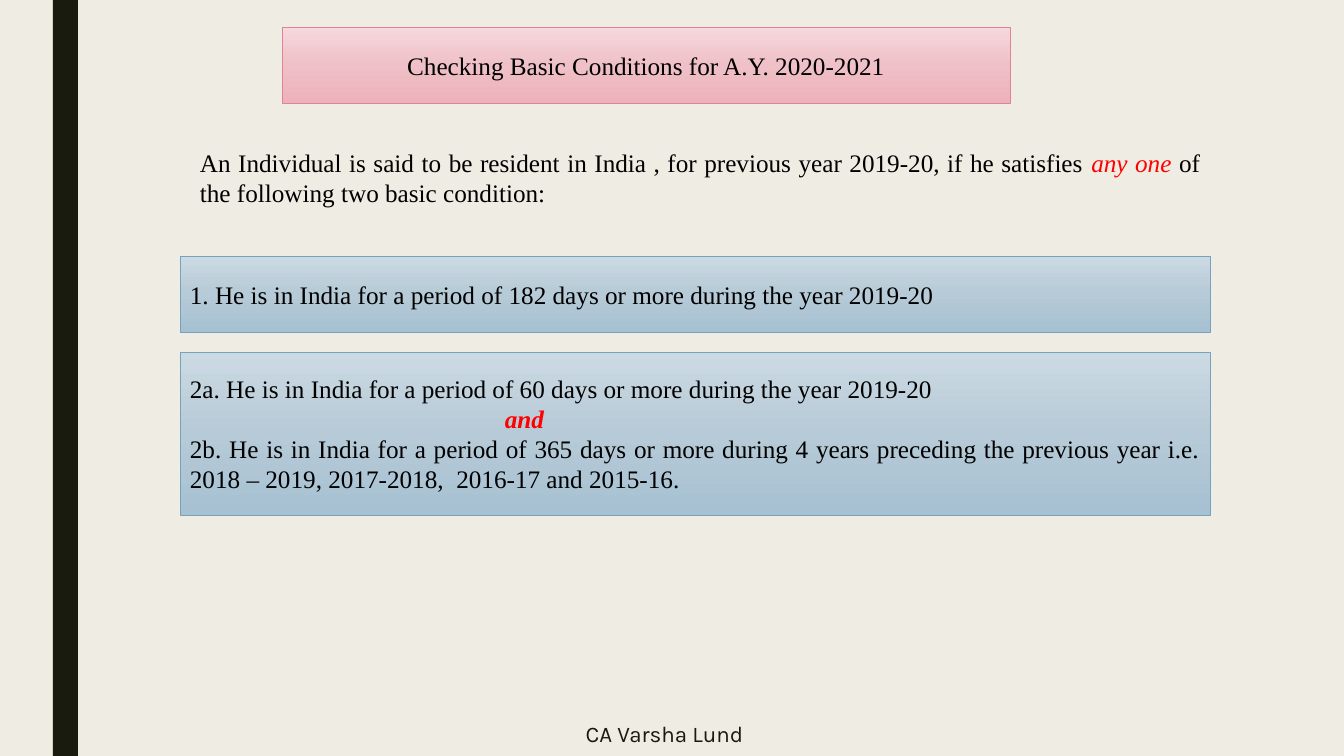
from copy import deepcopy

from pptx import Presentation, util as u
from pptx.dml.color import RGBColor
from pptx.enum import shapes, text
from pptx.oxml.ns import qn

SCALE = 12192000 / 1344  # EMU per px
INK, RED, DARK, PAPER = "000000", "FF0000", "191B0E", "EFEDE3"
PINK = ("F6D9DD", "EFC0C7", "EEB2BB"), "E28394"
BLUE = ("CCDAE3", "B6CAD7", "A7C1D2"), "77A2BB"
CENTER, JUSTIFY = text.PP_ALIGN.CENTER, text.PP_ALIGN.JUSTIFY
TOP, MIDDLE = text.MSO_ANCHOR.TOP, text.MSO_ANCHOR.MIDDLE


def px(length):
    return u.Emu(round(length * SCALE))


def rgb(color):
    return RGBColor.from_string(color)


class ConditionsSlide:
    font, size = "Times New Roman", 18

    def __init__(self, deck):
        self.slide = deck.slides.add_slide(deck.slide_layouts[5])
        self.slide.background.fill.solid()
        self.slide.background.fill.fore_color.rgb = rgb(PAPER)

    def rectangle(self, *box):
        shape = self.slide.shapes.add_shape(
            shapes.MSO_SHAPE.RECTANGLE, *map(px, box))
        shape.shadow.inherit = False
        return shape

    def bar(self, box, color):
        bar = self.rectangle(*box)
        bar.fill.solid()
        bar.fill.fore_color.rgb = rgb(color)
        bar.line.fill.background()

    def shade(self, shape, palette):
        """Fill from top to bottom through three colours, with a thin outline."""
        colors, outline = palette
        shape.fill.gradient()
        shape.fill.gradient_angle = 270
        stops = shape._element.spPr.find(".//" + qn("a:gsLst"))
        stops.insert(1, deepcopy(stops[0]))
        for stop, color, position in zip(
                shape.fill.gradient_stops, colors, (0, 0.5, 1)):
            stop.color.rgb = rgb(color)
            stop.position = position
        shape.line.color.rgb = rgb(outline)
        shape.line.width = u.Pt(0.5)

    def put_text(self, shape, paragraphs, align, anchor=MIDDLE, color=INK,
                 font=font, size=size):
        """Each paragraph is (indent, runs); a run is (words, style letters).

        Style letters: r red, b bold, i italic.
        """
        frame = shape.text_frame
        frame.word_wrap = True
        frame.auto_size = text.MSO_AUTO_SIZE.NONE
        frame.vertical_anchor = anchor
        for number, (indent, runs) in enumerate(paragraphs):
            paragraph = frame.add_paragraph() if number else frame.paragraphs[0]
            paragraph.alignment = align
            paragraph.font.name = font
            paragraph.font.size = u.Pt(size)
            paragraph.font.color.rgb = rgb(color)
            if indent:
                paragraph._p.get_or_add_pPr().set("marL", str(px(indent)))
            for words, style in runs:
                run = paragraph.add_run()
                run.text = words
                if "r" in style:
                    run.font.color.rgb = rgb(RED)
                if "b" in style:
                    run.font.bold = True
                if "i" in style:
                    run.font.italic = True

    def title(self, box, words):
        title = self.slide.shapes.title
        title.left, title.top, title.width, title.height = map(px, box)
        self.shade(title, PINK)
        self.put_text(title, [(0, [(words, "")])], CENTER)

    def label(self, box, paragraphs, align, **style):
        label = self.slide.shapes.add_textbox(*map(px, box))
        self.put_text(label, paragraphs, align, **style)

    def condition(self, box, paragraphs):
        panel = self.rectangle(*box)
        self.shade(panel, BLUE)
        self.put_text(panel, paragraphs, JUSTIFY)


def main():
    deck = Presentation()
    deck.slide_width, deck.slide_height = px(1344), px(756)
    page = ConditionsSlide(deck)
    page.bar((53, 0, 25, 756), DARK)
    page.title((282, 27, 728, 76), "Checking Basic Conditions for A.Y. 2020-2021")
    page.label((190, 142, 1020, 72), [(0, [
        ("An Individual is said to be resident in India , for previous year "
         "2019-20, if he satisfies ", ""),
        ("any one ", "ri"),
        ("of the following two basic condition:", "")])], JUSTIFY, anchor=TOP)
    page.condition((180, 256, 1030, 76), [
        (0, [("1. He is in India for a period of 182 days or more during the "
              "year 2019-20", "")])])
    page.condition((180, 352, 1030, 163), [
        (0, [("2a. He is in India for a period of 60 days or more during the "
              "year 2019-20", "")]),
        (315, [("and", "rbi")]),
        (0, [("2b. He is in India for a period of 365 days or more during 4 "
              "years preceding the previous year i.e. 2018 – 2019, 2017-2018,  "
              "2016-17 and 2015-16.", "")])])
    page.label((318, 712, 693, 44), [(0, [("CA Varsha Lund", "")])], CENTER,
               color=DARK, font="Karla", size=16)
    deck.save("out.pptx")


if __name__ == "__main__":
    main()
